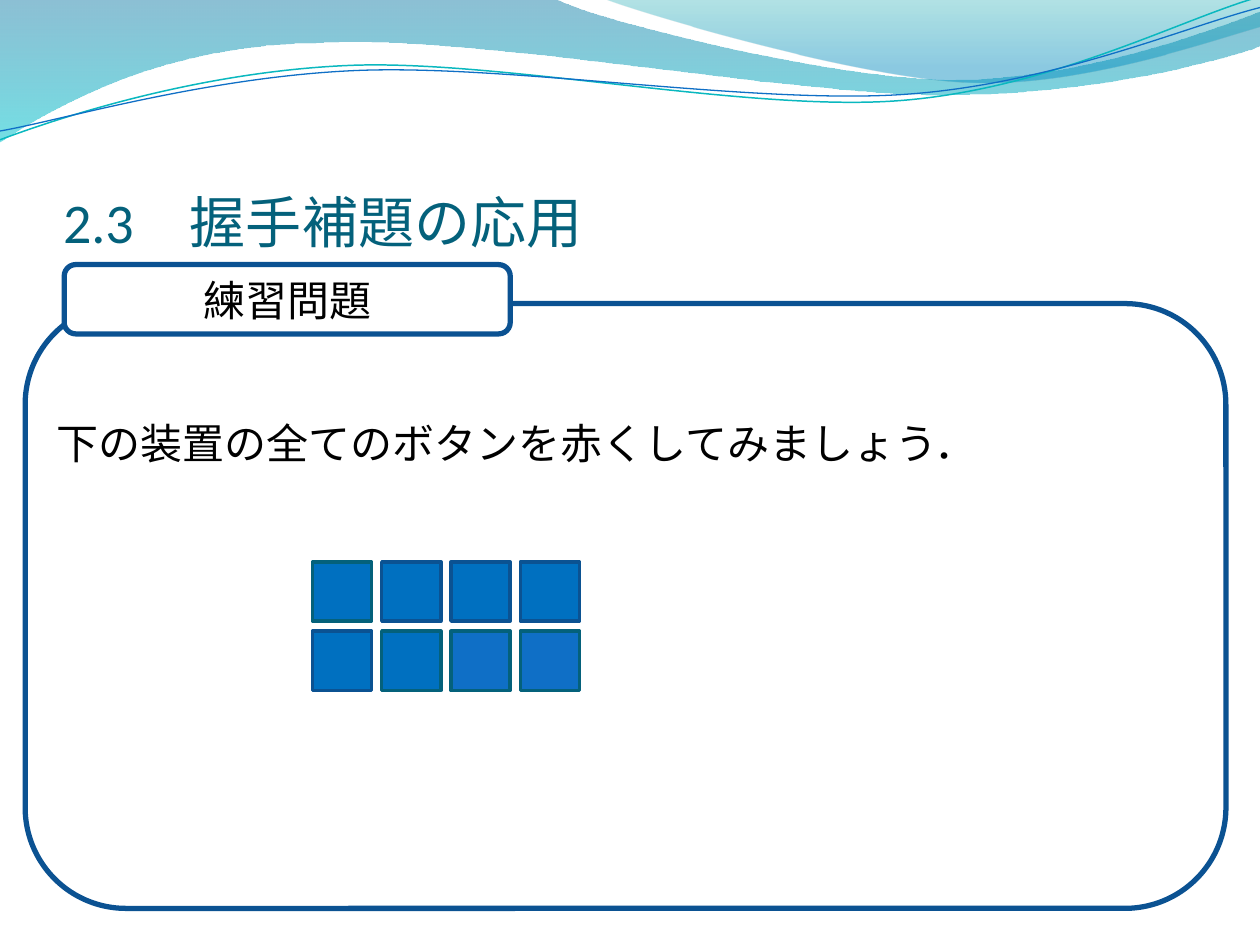
from lxml.etree import SubElement
from pptx import Presentation
from pptx.dml.color import RGBColor
from pptx.enum.shapes import MSO_SHAPE
from pptx.enum.text import MSO_ANCHOR, MSO_AUTO_SIZE, PP_ALIGN
from pptx.oxml.ns import qn
from pptx.util import Inches, Pt

NAVY = RGBColor(0x0B, 0x52, 0x92)
TEAL = RGBColor(0x04, 0x61, 0x7B)
BLUE = RGBColor(0x00, 0x70, 0xC0)
BRIGHT_BLUE = RGBColor(0x0F, 0x6F, 0xC6)
CYAN = RGBColor(0x0A, 0xB8, 0xBF)
BLACK = RGBColor(0, 0, 0)
WHITE = RGBColor(0xFF, 0xFF, 0xFF)
FONT = "Calibri"

TITLE = "2.3　握手補題の応用"
TAB_LABEL = "練習問題"
EXERCISE = "下の装置の全てのボタンを赤くしてみましょう．"

# Rows of buttons as (fill, line)
BUTTONS = [
    [(BLUE, TEAL), (BLUE, NAVY), (BLUE, NAVY), (BLUE, NAVY)],
    [(BLUE, NAVY), (BLUE, TEAL), (BRIGHT_BLUE, TEAL), (BRIGHT_BLUE, TEAL)],
]
BUTTON_LEFT, BUTTON_TOP, BUTTON_SIZE, BUTTON_PITCH = 2.48, 4.46, 0.47, 0.55

# Outlines: a point (x, y) ends a straight line, six numbers make a Bezier curve.
# Gradient stops: (position, colour, opacity in percent)
WAVES = [
    ([(0, -0.01), (4.4, -0.01), (4.76, 0.17, 6.64, 0.63, 7.58, 0.63),
      (8.53, 0.63, 9.58, 0.26, 10, 0.09), (10.01, 0.36),
      (9.83, 0.44, 8.7, 0.76, 7.46, 0.75), (6.22, 0.75, 3.82, 0.28, 2.57, 0.34),
      (1.29, 0.35, 0.46, 0.83, -0.01, 1.13)],
     [(0, RGBColor(0x00, 0x74, 0xA1), 45), (1, RGBColor(0x00, 0xC6, 0xCF), 55)]),
    ([(4.79, -0.01), (5.09, 0.11, 6.82, 0.62, 7.69, 0.65),
      (8.56, 0.69, 9.61, 0.32, 10, 0.21), (10, 0)],
     [(0, RGBColor(0x00, 0xA1, 0xA9), 30), (0.8, RGBColor(0x00, 0x8B, 0xBF), 45)]),
]
WAVE_LINES = [
    ([(0, 1.11), (0.48, 0.93, 1.58, 0.57, 2.77, 0.52),
      (3.95, 0.47, 5.93, 0.89, 7.13, 0.8), (8.33, 0.71, 9.38, 0.15, 9.98, -0.02)],
     CYAN, 0.85),
    ([(0, 1.04), (0.47, 0.96, 1.64, 0.61, 2.83, 0.56),
      (4.03, 0.51, 5.97, 0.83, 7.17, 0.75), (8.36, 0.67, 9.41, 0.21, 10, 0.06)],
     BRIGHT_BLUE, 0.75),
]


def add_outline(slide, outline, close):
    """Build a freeform through the end points, then bend its curved pieces."""
    first, *rest = [(Inches(piece[-2]), Inches(piece[-1])) for piece in outline]
    builder = slide.shapes.build_freeform(*first)
    builder.add_line_segments(rest, close=close)
    shape = builder.convert_to_shape()
    shape.shadow.inherit = False
    segments = list(shape.element.spPr.iter(qn("a:lnTo")))
    for segment, piece in zip(segments, outline[1:]):
        if len(piece) == 6:
            segment.tag = qn("a:cubicBezTo")
            for position, i in enumerate((0, 2)):
                control = segment.makeelement(qn("a:pt"), {
                    "x": str(Inches(piece[i]) - shape.left),
                    "y": str(Inches(piece[i + 1]) - shape.top)})
                segment.insert(position, control)
    return shape


def add_wave(slide, outline, stops):
    wave = add_outline(slide, outline, True)
    wave.line.fill.background()
    wave.fill.gradient()
    wave.fill.gradient_angle = 270
    for stop, (position, color, _) in zip(wave.fill.gradient_stops, stops):
        stop.position = position
        stop.color.rgb = color
    for color_element, (_, _, opacity) in zip(
            wave.element.spPr.iter(qn("a:srgbClr")), stops):
        SubElement(color_element, qn("a:alpha"), val=str(opacity * 1000))


def add_box(slide, kind, box, fill, line, width):
    shape = slide.shapes.add_shape(kind, *map(Inches, box))
    shape.shadow.inherit = False
    if fill is None:
        shape.fill.background()
    else:
        shape.fill.solid()
        shape.fill.fore_color.rgb = fill
    shape.line.color.rgb = line
    shape.line.width = Pt(width)
    return shape


def write(frame, text, size, color, align):
    frame.word_wrap = True
    paragraph = frame.paragraphs[0]
    paragraph.alignment = align
    run = paragraph.add_run()
    run.text = text
    run.font.size = Pt(size)
    run.font.name = FONT
    run.font.color.rgb = color
    return paragraph


def place(placeholder, box, anchor, margins):
    placeholder.left, placeholder.top, placeholder.width, placeholder.height = map(
        Inches, box)
    frame = placeholder.text_frame
    frame.auto_size = MSO_AUTO_SIZE.NONE
    frame.vertical_anchor = anchor
    (frame.margin_left, frame.margin_top,
     frame.margin_right, frame.margin_bottom) = map(Inches, margins)
    return frame


def main():
    presentation = Presentation()
    presentation.slide_width, presentation.slide_height = Inches(10), Inches(7.5)
    slide = presentation.slides.add_slide(presentation.slide_layouts[1])

    for outline, stops in WAVES:
        add_wave(slide, outline, stops)
    for outline, color, width in WAVE_LINES:
        strand = add_outline(slide, outline, False)
        strand.fill.background()
        strand.line.color.rgb = color
        strand.line.width = Pt(width)

    title = place(slide.shapes.title, (0.5, 0.77, 9, 1.25),
                  MSO_ANCHOR.BOTTOM, (0, 0.05, 0, 0))
    write(title, TITLE, 32, TEAL, PP_ALIGN.LEFT)

    add_box(slide, MSO_SHAPE.ROUNDED_RECTANGLE, (0.2, 2.41, 9.53, 4.8),
            None, NAVY, 3)
    tab = add_box(slide, MSO_SHAPE.ROUNDED_RECTANGLE, (0.51, 2.1, 3.54, 0.55),
                  WHITE, NAVY, 3)
    tab.text_frame.vertical_anchor = MSO_ANCHOR.MIDDLE
    write(tab.text_frame, TAB_LABEL, 24, BLACK, PP_ALIGN.CENTER)

    for row, buttons in enumerate(BUTTONS):
        for column, (fill, line) in enumerate(buttons):
            box = (BUTTON_LEFT + column * BUTTON_PITCH,
                   BUTTON_TOP + row * BUTTON_PITCH, BUTTON_SIZE, BUTTON_SIZE)
            add_box(slide, MSO_SHAPE.RECTANGLE, box, fill, line, 2)

    body = place(slide.placeholders[1], (0.35, 2.33, 9.45, 4.8),
                 MSO_ANCHOR.TOP, (0.1, 0.98, 0.1, 0.05))
    exercise = write(body, EXERCISE, 24, BLACK, PP_ALIGN.LEFT)
    exercise.space_before = Pt(0)
    properties = exercise._p.get_or_add_pPr()
    properties.set("marL", str(Inches(0.3)))
    properties.set("indent", str(Inches(-0.3)))
    SubElement(properties, qn("a:buNone"))

    presentation.save("out.pptx")


if __name__ == "__main__":
    main()
